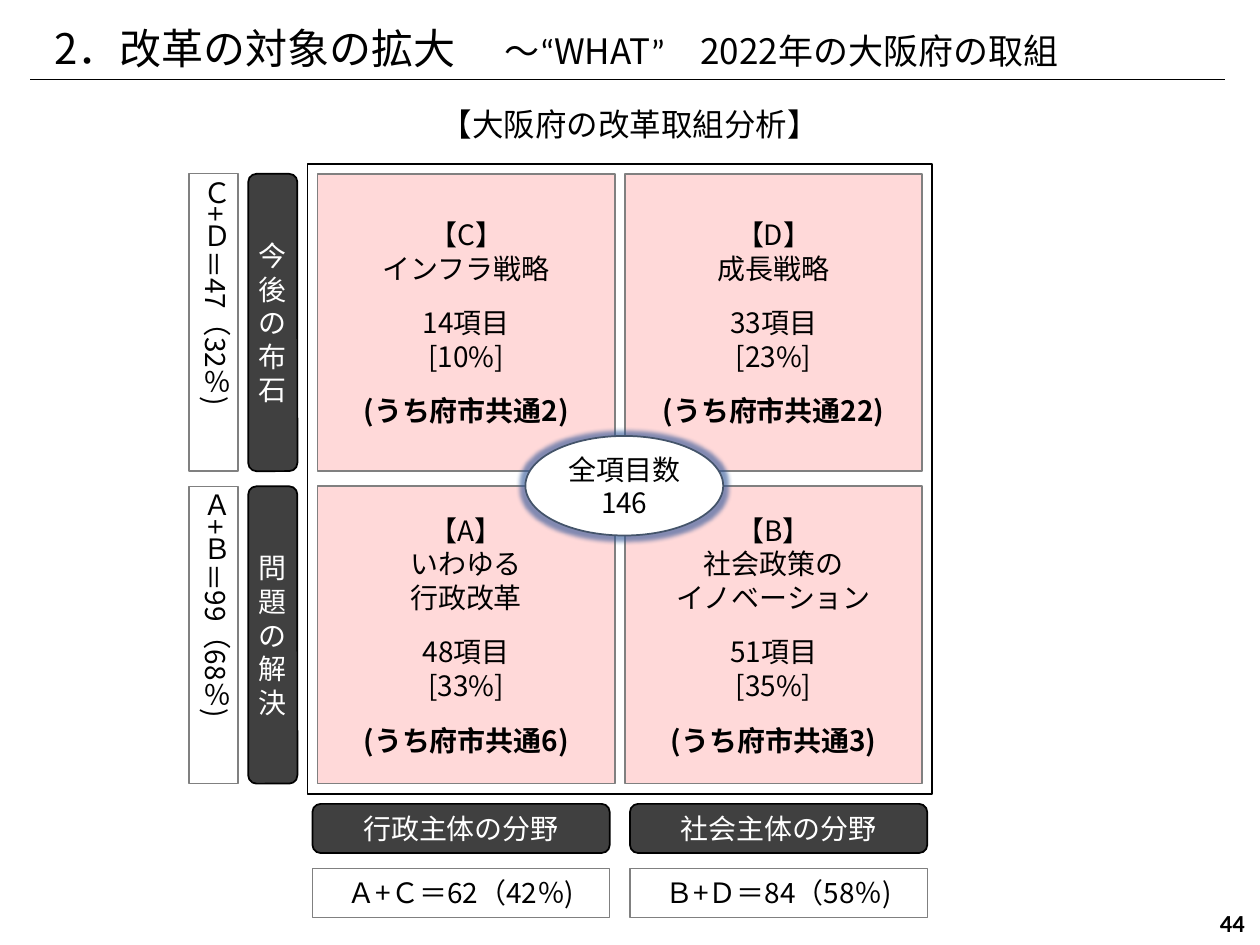
from dataclasses import dataclass

from lxml.etree import SubElement
from pptx import Presentation
from pptx.dml.color import RGBColor
from pptx.enum.shapes import MSO_CONNECTOR, MSO_SHAPE
from pptx.enum.text import MSO_ANCHOR, PP_ALIGN
from pptx.oxml.ns import qn
from pptx.util import Inches, Pt

FONT, LATIN = "Noto Sans CJK JP", "Calibri"
BLACK, WHITE, GREY, DARK, PINK = "000000", "FFFFFF", "808080", "404040", "FFD9D9"
LEFT, MID, RIGHT = PP_ALIGN.LEFT, PP_ALIGN.CENTER, PP_ALIGN.RIGHT
SIDE, BAR = 2.36, 0.39       # cell side, label thickness
ROWS = (1.38, 3.86)          # tops of the two rows
COLS = (2.52, 4.96)          # lefts of the two cell columns
FEET = (2.48, 5.0)           # lefts of the labels below


@dataclass
class Run:
    text: str
    size: float = 16
    bold: bool = False
    color: str = BLACK
    font: str = FONT


@dataclass
class Cell:
    mark: str
    name: tuple[str, ...]
    count: int
    share: int
    joint: int
    col: int
    row: int


@dataclass
class Label:
    name: tuple[str, ...]
    sum: str


CELLS = [
    Cell("C", ("インフラ戦略",), 14, 10, 2, 0, 0),
    Cell("D", ("成長戦略",), 33, 23, 22, 1, 0),
    Cell("A", ("いわゆる", "行政改革"), 48, 33, 6, 0, 1),
    Cell("B", ("社会政策の", "イノベーション"), 51, 35, 3, 1, 1),
]
SIDES = [
    Label(("今後", "の", "布石"), "Ｃ+Ｄ＝47（32％)"),
    Label(("問", "題の解決"), "Ａ+Ｂ＝99（68％)"),
]
BASES = [
    Label(("行政主体の分野",), "Ａ+Ｃ＝62（42％)"),
    Label(("社会主体の分野",), "Ｂ+Ｄ＝84（58％)"),
]
TITLE = [
    Run("2．改革の対象の拡大", 24), Run("　", 28), Run("～", 20),
    Run("“", 20, font=LATIN), Run("WHAT", 20), Run("”", 20, font=LATIN),
    Run("　2022年の大阪府の取組", 20),
]


def rgb(code: str) -> RGBColor:
    return RGBColor.from_string(code)


def write(shape, paras: list[list[Run]], align=MID, anchor=MSO_ANCHOR.MIDDLE,
          wrap=False, gaps=()) -> None:
    """Fill a shape with paragraphs; gaps lists those that need space before."""
    frame = shape.text_frame
    pad = Inches(0.04)
    form = {"word_wrap": wrap, "vertical_anchor": anchor, "margin_left": pad,
            "margin_top": pad, "margin_right": pad, "margin_bottom": pad}
    for key, val in form.items():
        setattr(frame, key, val)
    for i, runs in enumerate(paras):
        para = frame.add_paragraph() if i else frame.paragraphs[0]
        para.alignment = align
        if i in gaps:
            para.space_before = Pt(12)
        for item in runs:
            run = para.add_run()
            run.text = item.text
            look = {"size": Pt(item.size), "bold": item.bold, "name": item.font}
            for key, val in look.items():
                setattr(run.font, key, val)
            run.font.color.rgb = rgb(item.color)
            SubElement(run._r.get_or_add_rPr(), qn("a:ea"), typeface=item.font)


def box(slide, kind, at: tuple, line: str, width: float = 1, fill: str = ""):
    shape = slide.shapes.add_shape(kind, *map(Inches, at))
    shape.shadow.inherit = False
    if fill:
        shape.fill.solid()
        shape.fill.fore_color.rgb = rgb(fill)
    else:
        shape.fill.background()
    shape.line.color.rgb = rgb(line)
    shape.line.width = Pt(width)
    return shape


def text(slide, at: tuple, runs: list[Run], **form) -> None:
    write(slide.shapes.add_textbox(*map(Inches, at)), [runs], **form)


def rule(slide, x1: float, x2: float, y: float) -> None:
    line = slide.shapes.add_connector(
        MSO_CONNECTOR.STRAIGHT, Inches(x1), Inches(y), Inches(x2), Inches(y))
    line.line.color.rgb = rgb(BLACK)
    line.line.width = Pt(0.5)
    SubElement(line._element.spPr, qn("a:effectLst"))


def draw_cell(slide, cell: Cell) -> None:
    shape = box(slide, MSO_SHAPE.RECTANGLE,
                (COLS[cell.col], ROWS[cell.row], SIDE, SIDE), GREY, fill=PINK)
    lines = [f"【{cell.mark}】", *cell.name, f"{cell.count}項目", f"[{cell.share}%]"]
    paras = [[Run(line)] for line in lines]
    paras.append([Run(f"(うち府市共通{cell.joint})", bold=True)])
    write(shape, paras, gaps=(len(lines) - 2, len(lines)))


def draw_bar(slide, label: Label, at: tuple, wrap: bool) -> None:
    shape = box(slide, MSO_SHAPE.ROUNDED_RECTANGLE, at, BLACK, fill=DARK)
    write(shape, [[Run(part, color=WHITE)] for part in label.name], wrap=wrap)


def draw_sum(slide, label: Label, at: tuple, upright: bool) -> None:
    shape = box(slide, MSO_SHAPE.RECTANGLE, at, GREY, 0.75)
    anchor = MSO_ANCHOR.TOP if upright else MSO_ANCHOR.MIDDLE
    write(shape, [[Run(label.sum)]], anchor=anchor)
    if upright:
        shape.text_frame._txBody.bodyPr.set("vert", "eaVert")


def draw_total(slide) -> None:
    shape = box(slide, MSO_SHAPE.OVAL, (4.17, 3.46, 1.57, 0.79), "44546A", fill=WHITE)
    write(shape, [[Run("全項目数")], [Run("146")]])
    effect = shape._element.spPr.find(qn("a:effectLst"))
    glow = SubElement(effect, qn("a:glow"), rad=str(Pt(5)))
    color = SubElement(glow, qn("a:srgbClr"), val="2F5597")
    SubElement(color, qn("a:alpha"), val="60000")


def main() -> None:
    deck = Presentation()
    deck.slide_width, deck.slide_height = Inches(10), Inches(7.5)
    slide = deck.slides.add_slide(deck.slide_layouts[6])

    # Heading
    text(slide, (0.39, 0.08, 9.49, 0.47), TITLE, align=LEFT, anchor=MSO_ANCHOR.TOP)
    rule(slide, 0.24, 9.72, 0.63)

    # Matrix
    box(slide, MSO_SHAPE.RECTANGLE, (2.44, 1.3, 4.96, 5), BLACK)
    for cell in CELLS:
        draw_cell(slide, cell)

    # Axis labels
    for label, top in zip(SIDES, ROWS):
        draw_bar(slide, label, (1.97, top, BAR, SIDE), True)
    for label, left in zip(BASES, FEET):
        draw_bar(slide, label, (left, 6.38, SIDE, BAR), False)

    # Matrix caption, wide enough for one line
    text(slide, (3.46, 0.79, 3.2, 0.39), [Run("【大阪府の改革取組分析】", 18)], align=LEFT)

    # Sums by axis
    for label, left in zip(BASES, FEET):
        draw_sum(slide, label, (left, 6.89, SIDE, BAR), False)
    for label, top in zip(SIDES, ROWS):
        draw_sum(slide, label, (1.5, top, BAR, SIDE), True)

    # Total and page number
    draw_total(slide)
    text(slide, (9.45, 7.17, 0.47, 0.31), [Run("44", 14, True, font=LATIN)],
         align=RIGHT, wrap=True)

    deck.save("out.pptx")


if __name__ == "__main__":
    main()
